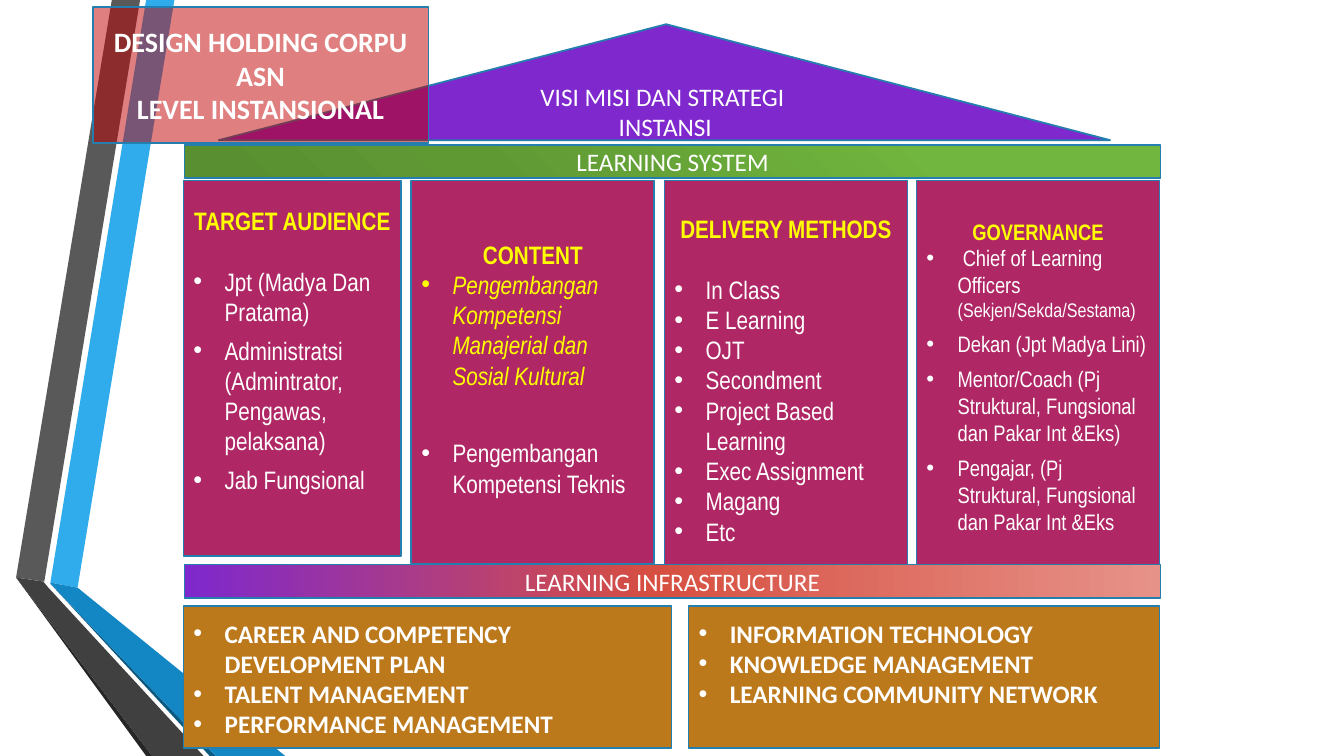
"""Build the slide showing the house-shaped design of an instansional learning holding."""
from lxml.etree import SubElement
from pptx import Presentation
from pptx.dml.color import RGBColor
from pptx.enum.shapes import MSO_SHAPE as SHAPE
from pptx.enum.text import MSO_ANCHOR as ANCHOR, PP_ALIGN as ALIGN
from pptx.oxml import parse_xml
from pptx.oxml.ns import nsdecls, qn
from pptx.util import Inches, Pt

rgb = RGBColor.from_string
WHITE, YELLOW = "FFFFFF", "FFFF00"
NARROW = "Arial Narrow"


def add_box(left, top, width, height, color, kind=SHAPE.RECTANGLE, inset=None):
    sp = slide.shapes.add_shape(kind, Inches(left), Inches(top), Inches(width), Inches(height))
    sp.shadow.inherit = False
    sp.fill.solid()
    sp.fill.fore_color.rgb = rgb(color)
    sp.line.color.rgb = rgb("247FAF")
    sp.line.width = Pt(1.25)
    tf = sp.text_frame
    tf.word_wrap = True
    tf.vertical_anchor = ANCHOR.MIDDLE if inset is None else ANCHOR.TOP
    if inset is not None:
        tf.margin_top = Inches(inset)
    return sp


def write(tf, text, size=18, color=WHITE, font="Calibri", bold=False, italic=False,
          bullet=False, before=0, after=0, join=False):
    p = tf.paragraphs[-1]
    if p.runs and not join:
        p = tf.add_paragraph()
    if not join:
        p.alignment = ALIGN.LEFT if bullet else ALIGN.CENTER
        p.space_before, p.space_after = Pt(before), Pt(after)
    if bullet:
        pPr = p._p.get_or_add_pPr()
        pPr.set("marL", str(Inches(0.31)))
        pPr.set("indent", str(-Inches(0.31)))
        SubElement(pPr, qn("a:buFont")).set("typeface", "Arial")
        SubElement(pPr, qn("a:buChar")).set("char", "•")
    r = p.add_run()
    r.text = text
    r.font.size, r.font.name = Pt(size), font
    r.font.bold, r.font.italic = bold, italic
    r.font.color.rgb = rgb(color)


prs = Presentation()
prs.slide_width, prs.slide_height = Inches(13.33), Inches(7.5)
slide = prs.slides.add_slide(prs.slide_layouts[6])

ribbons = [
    ("30ACEC", [(0.5, 5.78), (0.77, 5.83), (1.73, 0), (1.45, 0)]),
    ("595959", [(1.39, 0), (1.11, 0), (0.16, 5.73), (0.44, 5.77)]),
    ("262626", [(0.16, 5.73), (1.45, 7.5), (1.51, 7.5)]),
    ("0C5A82", [(0.5, 5.79), (2.08, 7.5), (2.14, 7.5)]),
    ("1287C3", [(0.5, 5.79), (2.14, 7.5), (2.83, 7.5), (0.77, 5.83), (0.5, 5.78)]),
    ("404040", [(2.02, 7.5), (0.48, 5.83), (0.43, 5.77), (0.16, 5.73), (1.51, 7.5)]),
]
for color, points in ribbons:
    start, *rest = [(Inches(x), Inches(y)) for x, y in points]
    builder = slide.shapes.build_freeform(*start)
    builder.add_line_segments(rest, close=True)
    sp = builder.convert_to_shape()
    sp.shadow.inherit = False
    sp.fill.solid()
    sp.fill.fore_color.rgb = rgb(color)
    sp.line.fill.background()

roof = add_box(2.17, 0.24, 8.84, 1.15, "7E28CD", SHAPE.ISOSCELES_TRIANGLE)
roof.adjustments[0] = 0.502
for line in ("VISI MISI DAN STRATEGI ", "INSTANSI"):
    write(roof.text_frame, line)

pillars = [
    (1.82, 2.16, 3.73, 0.25, "TARGET AUDIENCE", 18, 21.5, 6,
     ["Jpt (Madya Dan Pratama)", "Administratsi (Admintrator, Pengawas, pelaksana)",
      "Jab Fungsional"]),
    (4.08, 2.41, 3.8, 0.58, "CONTENT", 18, 0, 6, []),
    (6.59, 2.41, 3.97, 0.33, "DELIVERY METHODS", 18, 21.5, 0,
     ["In Class", "E Learning", "OJT", "Secondment", "Project Based Learning",
      "Exec Assignment", "Magang", "Etc"]),
    (9.09, 2.41, 3.97, 0.37, "GOVERNANCE", 16, 0, 6,
     [" Chief of Learning Officers ", "Dekan (Jpt Madya Lini)",
      "Mentor/Coach (Pj Struktural, Fungsional dan Pakar Int &Eks)",
      "Pengajar, (Pj Struktural, Fungsional dan Pakar Int &Eks"]),
]
for left, width, height, inset, title, size, gap, after, items in pillars:
    tf = add_box(left, 1.79, width, height, "AF2764", inset=inset).text_frame
    write(tf, title, size, YELLOW, NARROW, bold=True)
    if title == "CONTENT":
        write(tf, "Pengembangan Kompetensi Manajerial dan Sosial Kultural", size, YELLOW, NARROW,
              italic=True, bullet=True, after=after)
        write(tf, "Pengembangan Kompetensi Teknis", size, font=NARROW, bullet=True, before=28)
    for i, item in enumerate(items):
        write(tf, item, size, font=NARROW, bullet=True, before=0 if i else gap, after=after)
        if "Officers" in item:
            write(tf, "(Sekjen/Sekda/Sestama)", 14, font=NARROW, join=True)

foundations = [
    (1.82, 4.84, ["CAREER AND COMPETENCY DEVELOPMENT PLAN", "TALENT MANAGEMENT",
                  "PERFORMANCE MANAGEMENT"]),
    (6.83, 4.67, ["INFORMATION TECHNOLOGY", "KNOWLEDGE MANAGEMENT",
                  "LEARNING COMMUNITY NETWORK"]),
]
for left, width, items in foundations:
    tf = add_box(left, 6.01, width, 1.41, "BC791C", inset=0.12).text_frame
    for item in items:
        write(tf, item, bold=True, bullet=True)

beams = [
    (5.6, "LEARNING INFRASTRUCTURE", [(0, "7E28CD"), (48, "D74F41"), (100, "E69289")],
     '<a:lin ang="0" scaled="0"/>'),
    (1.44, "LEARNING SYSTEM",
     [(0, "71B63E"), (23, "71B63E"), (69, "5F9934"), (97, "598F31")],
     '<a:path path="circle"><a:fillToRect l="100000" b="100000"/></a:path>'),
]
for top, title, stops, direction in beams:
    sp = add_box(1.83, top, 9.68, 0.33, stops[0][1])
    write(sp.text_frame, title)
    gs = "".join(f'<a:gs pos="{pos * 1000}"><a:srgbClr val="{color}"/></a:gs>'
                 for pos, color in stops)
    spPr = sp._element.spPr
    spPr.replace(spPr.find(qn("a:solidFill")), parse_xml(
        f'<a:gradFill {nsdecls("a")}><a:gsLst>{gs}</a:gsLst>{direction}</a:gradFill>'))

heading = add_box(0.92, 0.07, 3.33, 1.35, "C00000")
fill_color = heading._element.spPr.find(qn("a:solidFill")).find(qn("a:srgbClr"))
SubElement(fill_color, qn("a:alpha")).set("val", "50000")
for line in ("DESIGN HOLDING CORPU ASN", "LEVEL INSTANSIONAL"):
    write(heading.text_frame, line, 20, bold=True)

prs.save("out.pptx")
